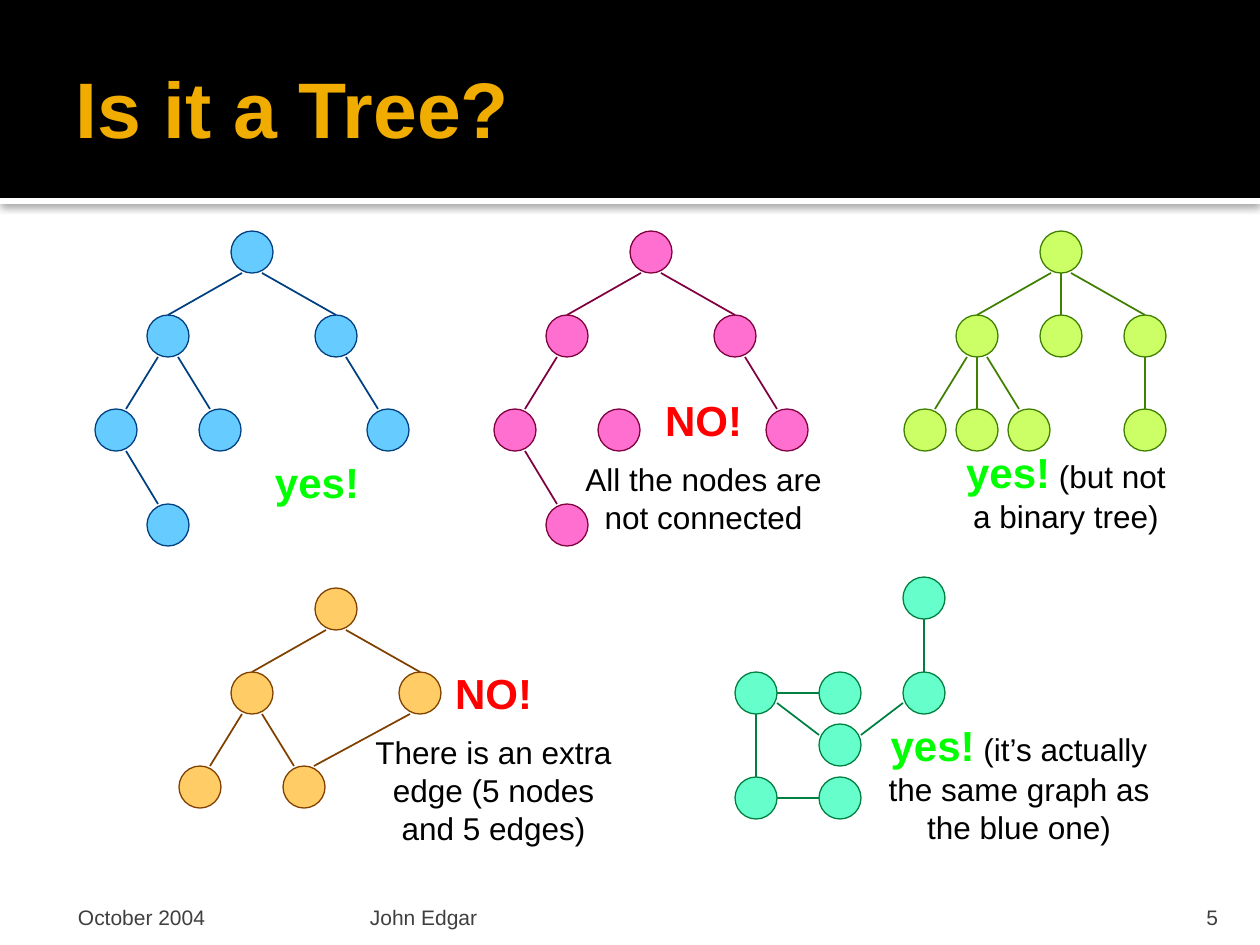
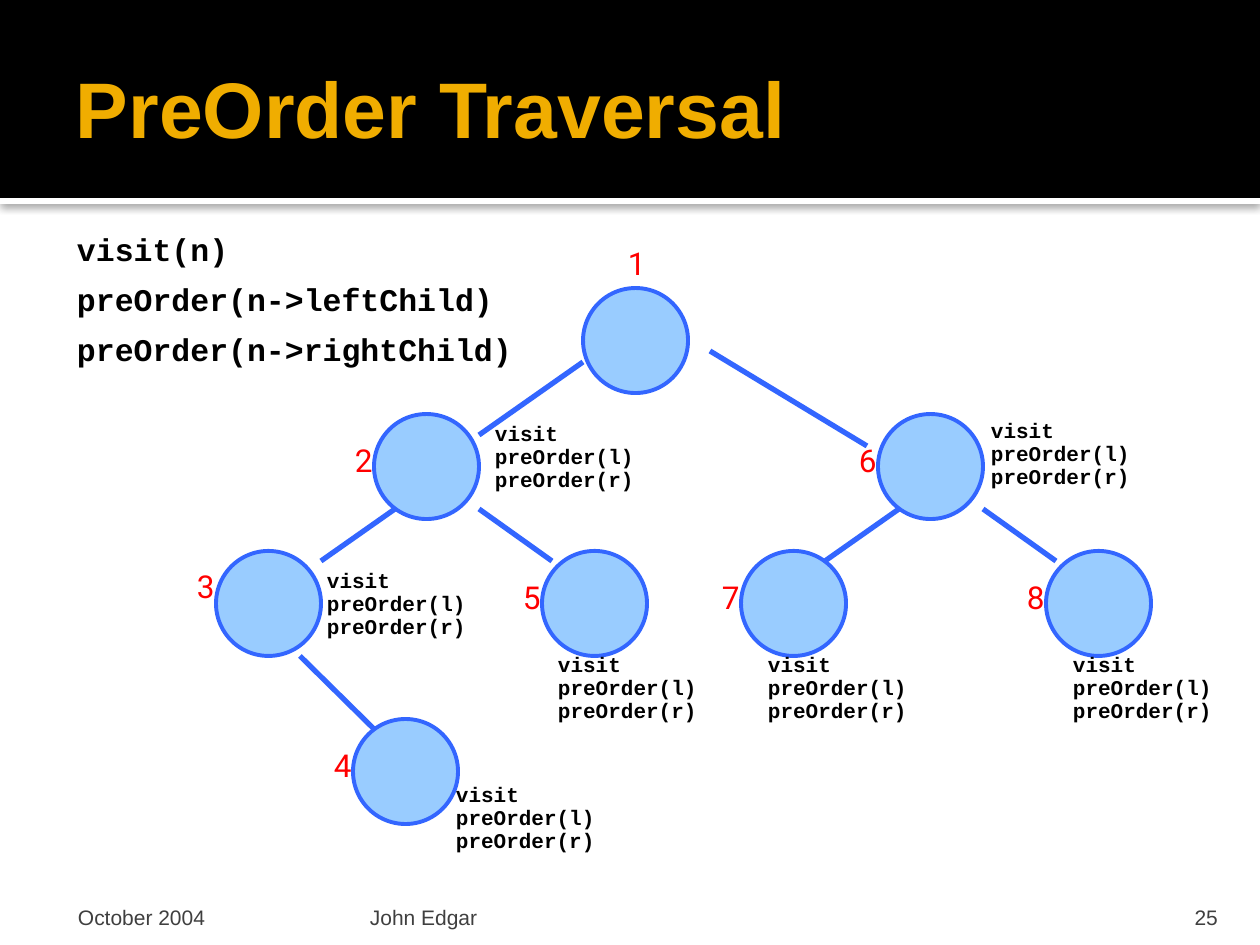
from pptx import Presentation
from pptx.dml.color import RGBColor
from pptx.enum.shapes import MSO_CONNECTOR, MSO_SHAPE
from pptx.enum.text import MSO_ANCHOR, MSO_AUTO_SIZE, PP_ALIGN
from pptx.oxml.ns import qn
from pptx.util import Pt
from lxml import etree

RECT, OVAL = MSO_SHAPE.RECTANGLE, MSO_SHAPE.OVAL
STRAIGHT = MSO_CONNECTOR.STRAIGHT
TOP, MIDDLE, BOTTOM = MSO_ANCHOR.TOP, MSO_ANCHOR.MIDDLE, MSO_ANCHOR.BOTTOM
LEFT, CENTER, RIGHT = PP_ALIGN.LEFT, PP_ALIGN.CENTER, PP_ALIGN.RIGHT
GROW, FIXED = MSO_AUTO_SIZE.SHAPE_TO_FIT_TEXT, MSO_AUTO_SIZE.NONE

PX_PER_INCH = 126
WIDTH, HEIGHT = 1260, 945
BAND_HEIGHT = 198
BLACK, WHITE, GOLD, GREY = "000000", "FFFFFF", "F0AD00", "3F3F3F"
RED, GREEN = "FF0000", "00FF00"
INSETS = (13, 6, 13, 6)

TITLE = dict(size=Pt(45), name="Arial", color=GOLD, bold=True)
FOOTER = dict(size=Pt(12), name="Arial", color=GREY)
BODY = dict(size=Pt(18), name="Arial", color=BLACK, bold=False)
YES = dict(size=Pt(24), name="Arial", color=GREEN, bold=True)
NO = dict(YES, color=RED)
NUMBER = dict(size=Pt(18), name="Roboto", color=RED)
CODE = dict(size=Pt(18), name="Courier New", color=BLACK, bold=True)
SMALL_CODE = dict(CODE, size=Pt(12))

SMALL_NODE, BIG_NODE = 42, 105
EDGE_SHIFT = 10
TREE_OFFSETS = {
    "root": (0, 0), "l": (-84, 84), "m": (0, 84), "r": (84, 84),
    "ll": (-136, 178), "lm": (-84, 178), "lr": (-32, 178),
    "rm": (84, 178), "rr": (136, 178), "llr": (-84, 273),
}
TREES = [
    ("FF6FCF", "800040", (630, 231), "root l r ll lr rr llr",
     "root-l root-r l-ll r-rr ll-llr"),
    ("FFCC66", "804000", (315, 588), "root l r ll lr",
     "root-l root-r l-ll l-lr r-lr"),
    ("CCFF66", "408000", (1040, 231), "root l m r ll lm lr rm",
     "root-l root-m root-r l-ll l-lm l-lr r-rm"),
    ("66CCFF", "004080", (231, 231), "root l r ll lr rr llr",
     "root-l root-r l-ll l-lr r-rr ll-llr"),
]
TEAL_FILL, TEAL_LINE = "66FFCC", "008040"
TEAL_NODES = [(735, 672), (819, 724), (903, 672), (819, 777),
              (819, 672), (903, 577), (735, 777)]
TEAL_EDGES = [
    (819, 735, 777, 703), (861, 735, 903, 703), (756, 714, 756, 777),
    (777, 693, 819, 693), (924, 619, 924, 672), (777, 798, 819, 798),
]
VERDICTS = [
    ((262, 451, 116, 63), LEFT, [[("yes!", YES)]]),
    ((567, 388, 273, 158), CENTER,
     [[("NO!", NO)], [("All the nodes are not connected", BODY)]]),
    ((357, 661, 273, 195), CENTER,
     [[("NO!", NO)],
      [("There is an extra edge (5 nodes and 5 edges)", BODY)]]),
    ((945, 441, 242, 101), CENTER,
     [[("yes!", YES), (" (but not a binary tree)", BODY)]]),
    ((872, 714, 294, 139), CENTER,
     [[("yes!", YES),
       (" (it’s actually the same graph as the blue one)", BODY)]]),
]

BIG_FILL, BIG_LINE = "99CCFF", "3366FF"
LEFT_OF_NODE = (-32, 21)
VISITS = [
    ((583, 288), (32, -50), None),
    ((374, 414), LEFT_OF_NODE, (489, 425)),
    ((216, 551), (-32, 10), (321, 572)),
    ((353, 719), LEFT_OF_NODE, (450, 786)),
    ((542, 551), LEFT_OF_NODE, (552, 656)),
    ((878, 414), LEFT_OF_NODE, (985, 422)),
    ((741, 551), LEFT_OF_NODE, (762, 656)),
    ((1046, 551), LEFT_OF_NODE, (1067, 656)),
]
VISIT_EDGES = [
    (583, 362, 479, 435), (395, 509, 321, 561), (899, 509, 825, 561),
    (710, 351, 867, 446), (300, 656, 374, 729), (983, 509, 1056, 561),
    (479, 509, 552, 561),
]
ALGORITHM = ["visit(n)", "preOrder(n->leftChild)", "preOrder(n->rightChild)"]
CALLS = ["visit", "preOrder(l)", "preOrder(r)"]


def px(value):
    return round(value * 914400 / PX_PER_INCH)


def rgb(color):
    return RGBColor.from_string(color)


def add_block(s, kind, box, fill, line=None, width=0.75):
    sp = s.shapes.add_shape(kind, *map(px, box))
    sp.shadow.inherit = False
    sp.fill.solid()
    sp.fill.fore_color.rgb = rgb(fill)
    if line:
        sp.line.color.rgb = rgb(line)
        sp.line.width = Pt(width)
    else:
        sp.line.fill.background()
    return sp


def add_node(s, x, y, size, fill, line, width=0.75):
    add_block(s, OVAL, (x, y, size, size), fill, line, width)


def add_edge(s, points, color, width=1):
    c = s.shapes.add_connector(STRAIGHT, *map(px, points))
    c.line.color.rgb = rgb(color)
    c.line.width = Pt(width)
    etree.SubElement(c._element.spPr, qn("a:effectLst"))


def add_run(p, text, style):
    r = p.add_run()
    r.text = text
    for key, value in style.items():
        if key == "color":
            r.font.color.rgb = rgb(value)
        else:
            setattr(r.font, key, value)


def set_half_space_before(p):
    before = etree.SubElement(p._p.get_or_add_pPr(), qn("a:spcBef"))
    etree.SubElement(before, qn("a:spcPct"), val="50000")


def add_text(s, box, paragraphs, align=LEFT, anchor=TOP, insets=INSETS,
             grow=True, line_spacing=None):
    tf = s.shapes.add_textbox(*map(px, box)).text_frame
    tf.word_wrap = True
    tf.auto_size = GROW if grow else FIXED
    tf.vertical_anchor = anchor
    for side, inset in zip(("left", "top", "right", "bottom"), insets):
        setattr(tf, "margin_" + side, px(inset))
    for i, runs in enumerate(paragraphs):
        p = tf.add_paragraph() if i else tf.paragraphs[0]
        p.alignment = align
        if line_spacing:
            p.line_spacing = line_spacing
        if grow:
            set_half_space_before(p)
        for text, style in runs:
            add_run(p, text, style)


def add_band_shadow(sp):
    effects = sp._element.spPr.find(qn("a:effectLst"))
    shadow = etree.SubElement(effects, qn("a:outerShdw"), blurRad="63500",
                              dist="10160", dir="5400000", rotWithShape="0")
    color = etree.SubElement(shadow, qn("a:srgbClr"), val=BLACK)
    etree.SubElement(color, qn("a:alpha"), val="60000")


def add_slide(prs, title, number):
    s = prs.slides.add_slide(prs.slide_layouts[6])
    add_band_shadow(add_block(s, RECT, (0, BAND_HEIGHT, WIDTH, 6), WHITE))
    add_block(s, RECT, (0, 0, WIDTH, BAND_HEIGHT), BLACK)
    add_text(s, (63, 21, 1134, 173), [[(title, TITLE)]], anchor=MIDDLE,
             insets=(13, 6, 6, 6), grow=False)
    footers = [
        ("October 2004", 63, 294, LEFT, (15, 6, 6, 0)),
        ("John Edgar", 364, 759, LEFT, (6, 6, 6, 0)),
        (str(number), 1130, 101, RIGHT, (13, 6, 13, 0)),
    ]
    for text, x, width, align, insets in footers:
        add_text(s, (x, 892, width, 38), [[(text, FOOTER)]], align,
                 BOTTOM, insets, grow=False)
    return s


def add_tree(s, fill, line, root, nodes, edges):
    places = {name: (root[0] + dx, root[1] + dy)
              for name, (dx, dy) in TREE_OFFSETS.items()}
    for name in nodes.split():
        add_node(s, *places[name], SMALL_NODE, fill, line)
    half = SMALL_NODE // 2
    for edge in edges.split():
        parent, child = edge.split("-")
        (x1, y1), (x2, y2) = places[parent], places[child]
        shift = EDGE_SHIFT * ((x2 > x1) - (x2 < x1))
        end_shift = 0 if parent == "root" else shift
        add_edge(s, (x1 + half + shift, y1 + SMALL_NODE,
                     x2 + half - end_shift, y2), line)


def add_tree_slide(prs):
    s = add_slide(prs, "Is it a Tree?", 5)
    for tree in TREES:
        add_tree(s, *tree)
    for x, y in TEAL_NODES:
        add_node(s, x, y, SMALL_NODE, TEAL_FILL, TEAL_LINE)
    for points in TEAL_EDGES:
        add_edge(s, points, TEAL_LINE)
    for box, align, paragraphs in VERDICTS:
        add_text(s, box, paragraphs, align)


def add_traversal_slide(prs):
    s = add_slide(prs, "PreOrder Traversal", 25)
    for points in VISIT_EDGES:
        add_edge(s, points, BIG_LINE, 3)
    for (x, y), _, _ in VISITS:
        add_node(s, x, y, BIG_NODE, BIG_FILL, BIG_LINE, 2.25)
    for number, ((x, y), (dx, dy), calls_at) in enumerate(VISITS, 1):
        add_text(s, (x + dx, y + dy, 40, 50), [[(str(number), NUMBER)]])
        if calls_at:
            add_text(s, (*calls_at, 165, 76),
                     [[(call, SMALL_CODE)] for call in CALLS],
                     insets=(6, 6, 6, 6), line_spacing=0.5)
    for i, step in enumerate(ALGORITHM):
        add_text(s, (64, 224 + 50 * i, 498, 50), [[(step, CODE)]])


def main():
    prs = Presentation()
    prs.slide_width, prs.slide_height = px(WIDTH), px(HEIGHT)
    add_tree_slide(prs)
    add_traversal_slide(prs)
    prs.save("out.pptx")


if __name__ == "__main__":
    main()
